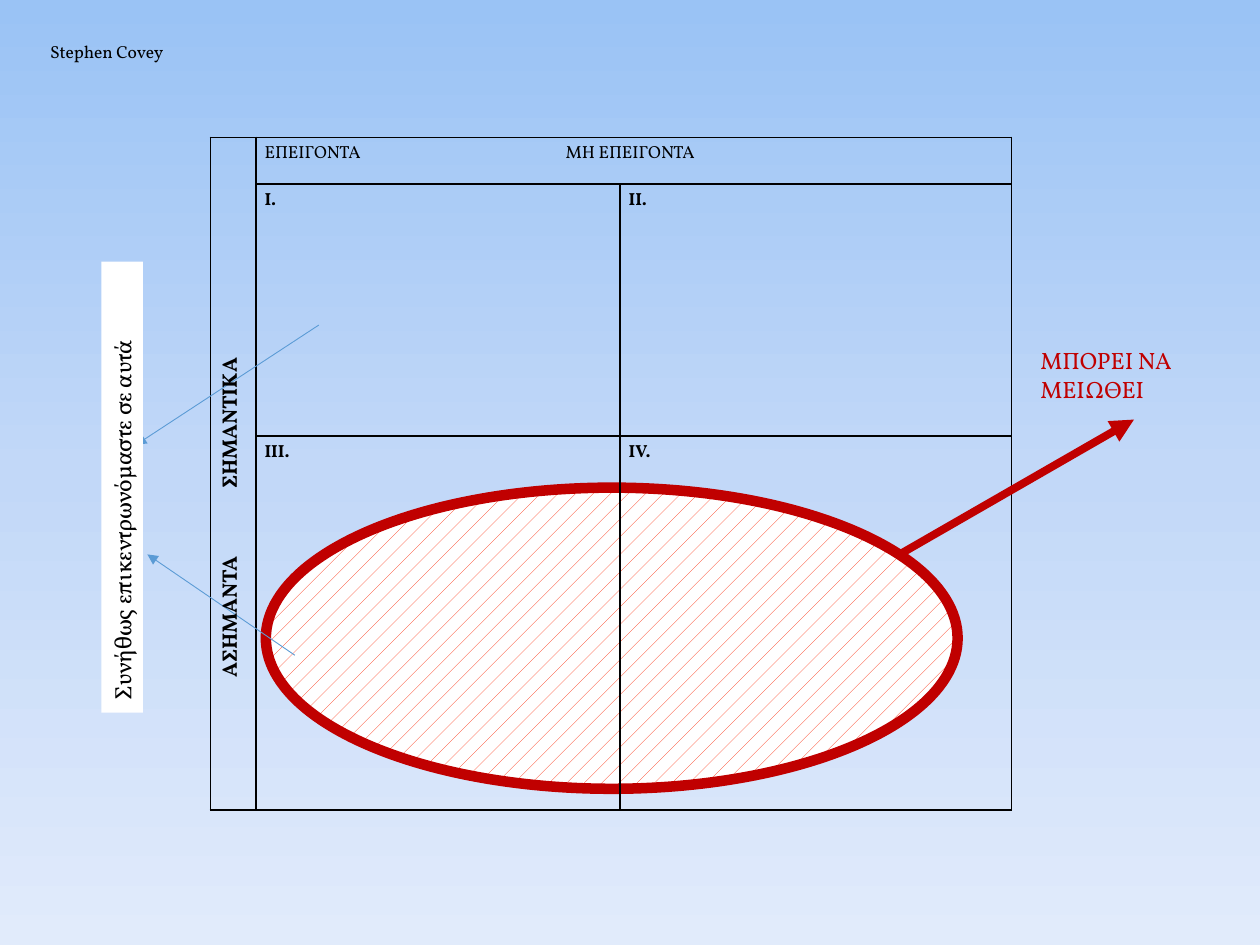
from copy import deepcopy

from pptx import Presentation
from pptx import util as u
from pptx.dml.color import RGBColor
from pptx.enum import dml, shapes, text
from pptx.oxml import parse_xml
from pptx.oxml.ns import nsdecls, qn

BLACK, WHITE, RED, BLUE = "000000", "FFFFFF", "C00000", "5B9BD5"
rgb = RGBColor.from_string


def write(tf, words, size, color=BLACK, bold=False, tab=None):
    """Fill a text frame with one run, with an optional tab stop in inches."""
    p = tf.paragraphs[0]
    p.alignment = text.PP_ALIGN.LEFT
    if tab:
        p._p.get_or_add_pPr().append(parse_xml(
            f'<a:tabLst {nsdecls("a")}><a:tab pos="{u.Inches(tab)}" algn="l"/></a:tabLst>'))
    r = p.add_run()
    r.text = words
    for name, value in {"name": "Vollkorn", "size": u.Pt(size), "bold": bold}.items():
        setattr(r.font, name, value)
    r.font.color.rgb = rgb(color)


prs = Presentation()
prs.slide_width, prs.slide_height = u.Inches(10), u.Inches(7.5)
s = prs.slides.add_slide(prs.slide_layouts[6])

# Background gradient, top to bottom
fill = s.background.fill
fill.gradient()
fill.gradient_angle = 270
stops = s.element.find(".//" + qn("a:gsLst"))
stops.insert(1, deepcopy(stops[0]))
for stop, (position, color) in zip(fill.gradient_stops,
                                   [(0, "9AC3F5"), (0.5, "C2D8F8"), (1, "E1EBFB")]):
    stop.position = position
    stop.color.rgb = rgb(color)

# Ellipse behind the lower quadrants
sp = s.shapes.add_shape(shapes.MSO_SHAPE.OVAL, *map(u.Inches, (2.11, 3.87, 5.49, 2.39)))
sp.shadow.inherit = False
sp.fill.patterned()
sp.fill.pattern = dml.MSO_PATTERN.PERCENT_5
sp.fill.fore_color.rgb = rgb("FB2805")
sp.fill.back_color.rgb = rgb(WHITE)
sp.line.color.rgb = rgb(RED)
sp.line.width = u.Pt(6)

# Time management matrix
widths, heights = [0.36, 2.89, 3.11], [0.37, 2, 2.97]
frame = s.shapes.add_table(3, 3, *map(u.Inches, (1.67, 1.09, sum(widths), sum(heights))))
table = frame.table
table.first_row = table.horz_banding = False
for column, width in zip(table.columns, widths):
    column.width = u.Inches(width)
for row, height in zip(table.rows, heights):
    row.height = u.Inches(height)
for cell in table.iter_cells():
    cell.fill.background()
    cell.margin_left = cell.margin_right = u.Inches(0.07)
    cell.margin_top = cell.margin_bottom = u.Inches(0.04)
    for i, side in enumerate(("lnL", "lnR", "lnT", "lnB")):
        cell._tc.tcPr.insert(i, parse_xml(
            f'<a:{side} {nsdecls("a")} w="{u.Pt(1)}"><a:solidFill>'
            f'<a:srgbClr val="{BLACK}"/></a:solidFill></a:{side}>'))
table.cell(0, 0).merge(table.cell(2, 0))
table.cell(0, 1).merge(table.cell(0, 2))
write(table.cell(0, 1).text_frame, "ΕΠΕΙΓΟΝΤΑ\tΜΗ ΕΠΕΙΓΟΝΤΑ", 10, tab=2.39)
for i, numeral in enumerate(("I.", "II.", "III.", "IV.")):
    write(table.cell(1 + i // 2, 1 + i % 2).text_frame, numeral, 10, bold=True)

# Labels: place, rotation, background, text format
labels = [
    ((-0.16, 3.35, 3.95, 0.3), 270, None,
     {"words": "ΑΣΗΜΑΝΤΑ\tΣΗΜΑΝΤΙΚΑ", "size": 12, "bold": True, "tab": 1.5}),
    ((0.3, 0.28, 1.37, 0.27), 0, None, {"words": "Stephen Covey", "size": 10}),
    ((8.16, 2.7, 1.64, 0.56), 0, None,
     {"words": "ΜΠΟΡΕΙ ΝΑ ΜΕΙΩΘΕΙ", "size": 13.5, "color": RED}),
    ((-0.82, 3.7, 3.58, 0.33), 270, WHITE,
     {"words": "Συνήθως επικεντρωνόμαστε σε αυτά", "size": 13.5}),
]
arrows = [
    ((7.14, 4.4, 9, 3.33), RED, 4.5),
    ((2.53, 2.58, 1.08, 3.53), BLUE, 0.5),
    ((2.34, 5.2, 1.17, 4.4), BLUE, 0.5),
]

# Arrows come first so that the white label covers their tips
for ends, color, width in arrows:
    line = s.shapes.add_connector(shapes.MSO_CONNECTOR.STRAIGHT, *map(u.Inches, ends))
    line.line.color.rgb = rgb(color)
    line.line.width = u.Pt(width)
    line.line._get_or_add_ln().append(parse_xml(f'<a:tailEnd {nsdecls("a")} type="triangle"/>'))
    line._element.spPr.append(parse_xml(f'<a:effectLst {nsdecls("a")}/>'))

for place, rotation, background, words in labels:
    sp = s.shapes.add_textbox(*map(u.Inches, place))
    sp.rotation = rotation
    if background:
        sp.fill.solid()
        sp.fill.fore_color.rgb = rgb(background)
    sp.text_frame.word_wrap = True
    sp.text_frame.auto_size = text.MSO_AUTO_SIZE.SHAPE_TO_FIT_TEXT
    write(sp.text_frame, **words)

prs.save("out.pptx")
